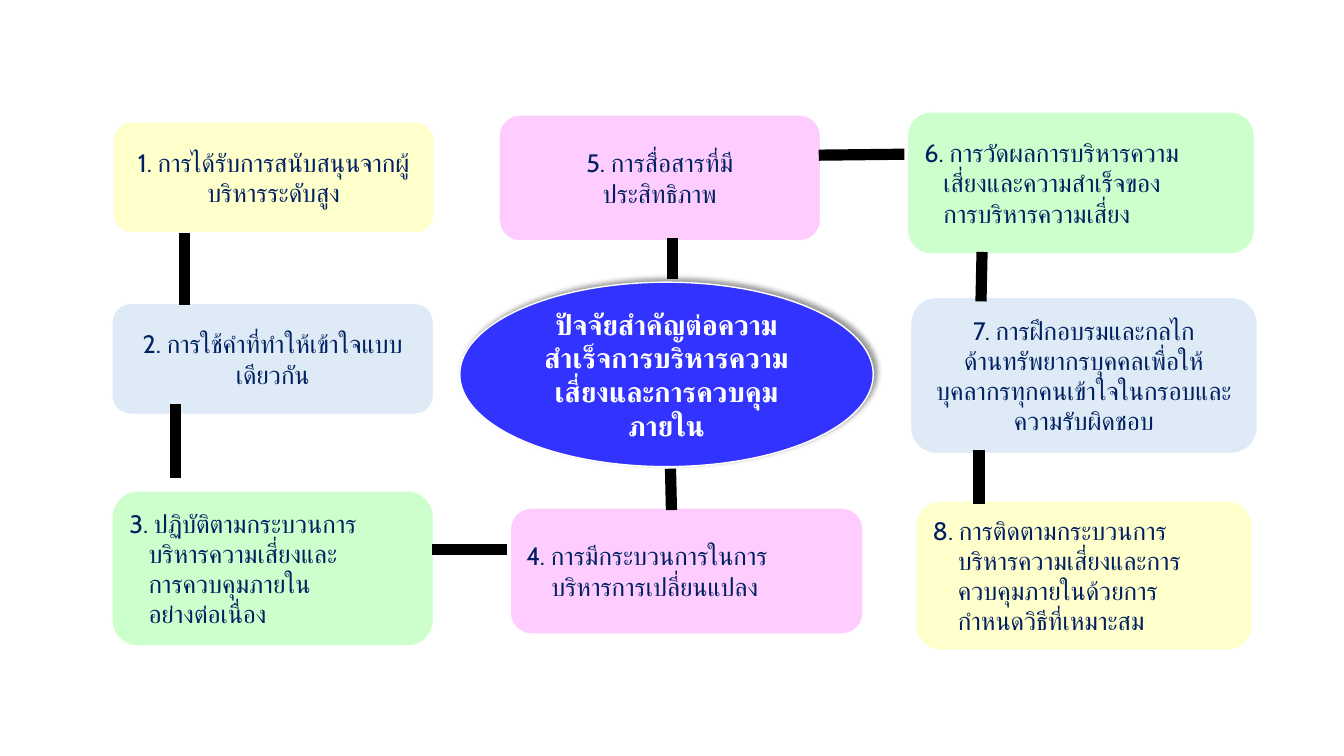
from lxml import etree
from pptx import Presentation, util as u
from pptx.dml.color import RGBColor
from pptx.enum import shapes, text
from pptx.oxml.ns import qn

COLORS = {"yellow": "FFFFCC", "sky": "DEEBF7", "green": "CCFFCC", "pink": "FFCCFF",
          "blue": "3333FF", "navy": "002060", "white": "FFFFFF", "black": "000000"}
FONT = "Cabin"
WIDTH, HEIGHT = u.Inches(13.33), u.Inches(7.5)

# Places are percentages of the slide's width and height.
CENTRE = ((34.21, 37.33, 30.76, 24.4),
          ["ปัจจัยสำคัญต่อความสำเร็จการบริหารความเสี่ยงและการควบคุมภายใน"])
# Place, fill, indent of the following lines in inches (None is centred), lines.
FACTORS = [
    ((8.4, 16.13, 23.93, 14.67), "yellow", None,
     ["1. การได้รับการสนับสนุนจากผู้บริหารระดับสูง"]),
    ((8.33, 40.13, 23.93, 14.67), "sky", None,
     ["2. การใช้คำที่ทำให้เข้าใจแบบเดียวกัน"]),
    ((8.33, 64.93, 23.93, 20.53), "green", 0.19,
     ["3. ปฏิบัติตามกระบวนการ", "บริหารความเสี่ยงและ", "การควบคุมภายใน", "อย่างต่อเนื่อง"]),
    ((37.96, 67.2, 26.26, 16.67), "pink", 0.25,
     ["4. การมีกระบวนการในการ", "บริหารการเปลี่ยนแปลง"]),
    ((37.13, 15.2, 23.93, 16.67), "pink", None,
     ["5. การสื่อสารที่มี", "ประสิทธิภาพ"]),
    ((67.52, 14.8, 25.81, 18.8), "green", 0.19,
     ["6. การวัดผลการบริหารความ", "เสี่ยงและความสำเร็จของ", "การบริหารความเสี่ยง"]),
    ((67.74, 39.33, 25.81, 20.67), "sky", None,
     ["7. การฝึกอบรมและกลไก", "ด้านทรัพยากรบุคคลเพื่อให้",
      "บุคลากรทุกคนเข้าใจในกรอบและความรับผิดชอบ"]),
    ((68.12, 66.27, 25.06, 19.73), "yellow", 0.25,
     ["8. การติดตามกระบวนการ", "บริหารความเสี่ยงและการ", "ควบคุมภายในด้วยการ",
      "กำหนดวิธีที่เหมาะสม"]),
]
LINKS = [
    (13.73, 30.8, 13.73, 40.4),
    (13.05, 53.47, 13.05, 63.2),
    (32.11, 72.67, 37.73, 72.67),
    (49.96, 67.47, 49.89, 62),
    (50.04, 36.93, 50.04, 31.47),
    (67.29, 20.4, 60.92, 20.53),
    (73.07, 33.33, 72.99, 39.87),
    (72.84, 59.47, 72.84, 66.67),
]
CENTRE_FORMAT = {"size": u.Pt(20), "bold": True, "name": FONT}
FACTOR_FORMAT = {"size": u.Pt(18), "bold": False, "name": FONT}


def rgb(name):
    return RGBColor.from_string(COLORS[name])


def scale(place):
    return [round(share * side / 100) for share, side in zip(place, (WIDTH, HEIGHT) * 2)]


def add_box(page, kind, place, fill, lines, ink, font_format, indent=None):
    box = page.shapes.add_shape(kind, *scale(place))
    box.shadow.inherit = False
    box.fill.solid()
    box.fill.fore_color.rgb = rgb(fill)
    box.line.color.rgb = rgb("white")
    box.line.width = u.Pt(1)
    frame = box.text_frame
    frame.word_wrap = True
    frame.vertical_anchor = text.MSO_ANCHOR.MIDDLE
    for number, line in enumerate(lines):
        para = frame.add_paragraph() if number else frame.paragraphs[0]
        para.alignment = text.PP_ALIGN.CENTER if indent is None else text.PP_ALIGN.LEFT
        if indent and number:
            para._p.get_or_add_pPr().set("marL", str(u.Inches(indent)))
        span = para.add_run()
        span.text = line
        for key, value in font_format.items():
            setattr(span.font, key, value)
        span.font.color.rgb = rgb(ink)
        etree.SubElement(span._r.get_or_add_rPr(), qn("a:cs"), typeface=FONT)
    return box


def add_shadow(box):
    effects = box._element.spPr.find(qn("a:effectLst"))
    shadow = etree.SubElement(effects, qn("a:outerShdw"), blurRad=str(u.Pt(4)),
                              dist=str(u.Pt(3)), dir=str(315 * 60000), rotWithShape="0")
    color = etree.SubElement(shadow, qn("a:srgbClr"), val=COLORS["black"])
    etree.SubElement(color, qn("a:alpha"), val="40000")


def add_link(page, ends):
    link = page.shapes.add_connector(shapes.MSO_CONNECTOR.STRAIGHT, *scale(ends))
    link.line.color.rgb = rgb("black")
    link.line.width = u.Pt(8)
    etree.SubElement(link._element.spPr, qn("a:effectLst"))


def main():
    deck = Presentation()
    deck.slide_width, deck.slide_height = WIDTH, HEIGHT
    page = deck.slides.add_slide(deck.slide_layouts[6])
    place, lines = CENTRE
    centre = add_box(page, shapes.MSO_SHAPE.OVAL, place, "blue", lines, "white", CENTRE_FORMAT)
    add_shadow(centre)
    for place, fill, indent, lines in FACTORS:
        add_box(page, shapes.MSO_SHAPE.ROUNDED_RECTANGLE, place, fill, lines, "navy",
                FACTOR_FORMAT, indent)
    for ends in LINKS:
        add_link(page, ends)
    deck.save("out.pptx")


if __name__ == "__main__":
    main()
